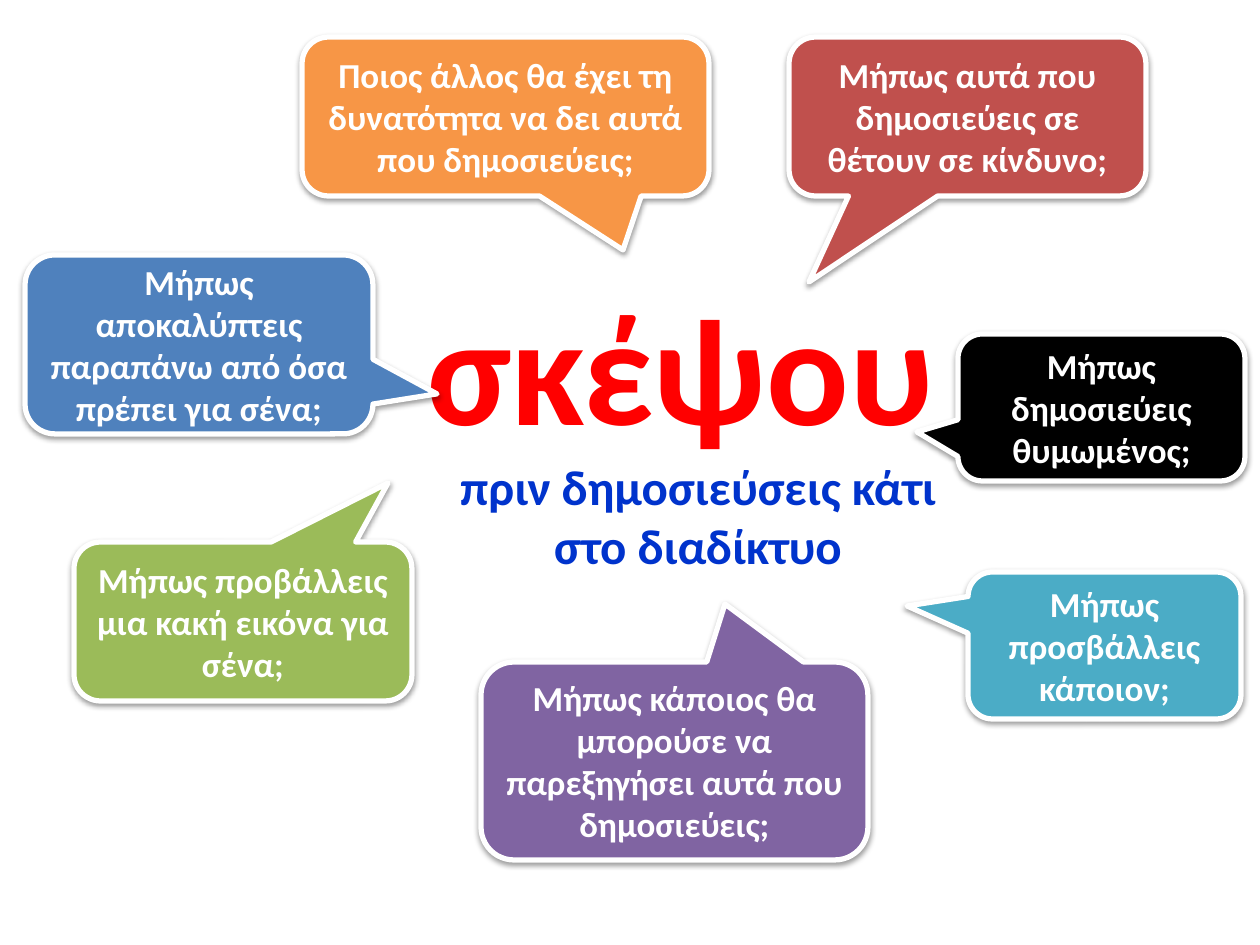
from dataclasses import dataclass

from lxml import etree
from pptx import Presentation
from pptx.dml.color import RGBColor
from pptx.enum.shapes import MSO_SHAPE
from pptx.enum.text import MSO_ANCHOR, PP_ALIGN
from pptx.oxml.ns import qn
from pptx.util import Emu, Pt

RECTANGLE = MSO_SHAPE.RECTANGLE
CALLOUT = MSO_SHAPE.ROUNDED_RECTANGULAR_CALLOUT
CENTER = PP_ALIGN.CENTER
MIDDLE = MSO_ANCHOR.MIDDLE

PIXELS_PER_INCH = 126
FONT = "Calibri"
COLORS = {
    "white": "FFFFFF",
    "black": "000000",
    "title": "FF0000",
    "subtitle": "0033CC",
    "orange": "F79646",
    "teal": "4BACC6",
    "blue": "4F81BD",
    "green": "9BBB59",
    "purple": "8064A2",
    "red": "C0504D",
}


@dataclass(frozen=True)
class Box:
    left: int
    top: int
    width: int
    height: int


@dataclass(frozen=True)
class Question:
    text: str
    color: str
    box: Box
    tip: tuple[int, int]  # point of the callout's tail


MESSAGE_BOX = Box(362, 255, 672, 336)
QUESTIONS = [
    Question("Ποιος άλλος θα έχει τη δυνατότητα να δει αυτά που δημοσιεύεις;",
             "orange", Box(302, 37, 407, 159), (623, 250)),
    Question("Μήπως δημοσιεύεις θυμωμένος;",
             "black", Box(958, 334, 287, 147), (917, 432)),
    Question("Μήπως προσβάλλεις κάποιον;",
             "teal", Box(968, 572, 273, 147), (907, 606)),
    Question("Μήπως αποκαλύπτεις παραπάνω από όσα πρέπει για σένα;",
             "blue", Box(25, 255, 348, 179), (437, 394)),
    Question("Μήπως προβάλλεις μια κακή εικόνα για σένα;",
             "green", Box(74, 542, 338, 159), (388, 483)),
    Question("Μήπως κάποιος θα μπορούσε να παρεξηγήσει αυτά που δημοσιεύεις;",
             "purple", Box(481, 662, 387, 198), (725, 604)),
    Question("Μήπως αυτά που δημοσιεύεις σε θέτουν σε κίνδυνο;",
             "red", Box(789, 37, 357, 159), (809, 282)),
]


def px(length: int) -> Emu:
    return Emu(round(length * 914400 / PIXELS_PER_INCH))


def rgb(color: str) -> RGBColor:
    return RGBColor.from_string(COLORS[color])


def add_box(slide, preset, box: Box, fill: str):
    shape = slide.shapes.add_shape(
        preset, px(box.left), px(box.top), px(box.width), px(box.height))
    shape.shadow.inherit = False
    shape.fill.solid()
    shape.fill.fore_color.rgb = rgb(fill)
    shape.text_frame.word_wrap = True
    shape.text_frame.vertical_anchor = MIDDLE
    return shape


def write_text(paragraph, text: str, *, size: int, color: str) -> None:
    paragraph.alignment = CENTER
    run = paragraph.add_run()
    run.text = text
    run.font.name = FONT
    run.font.size = Pt(size)
    run.font.bold = True
    run.font.color.rgb = rgb(color)


def add_soft_shadow(shape) -> None:
    effects = shape.element.spPr.find(qn("a:effectLst"))
    shadow = etree.SubElement(
        effects, qn("a:outerShdw"), blurRad="40000", dist="20000",
        dir="5400000", rotWithShape="0")
    color = etree.SubElement(shadow, qn("a:srgbClr"), val=COLORS["black"])
    etree.SubElement(color, qn("a:alpha"), val="38000")


def add_message(slide) -> None:
    shape = add_box(slide, RECTANGLE, MESSAGE_BOX, "white")
    shape.line.fill.background()
    frame = shape.text_frame
    write_text(frame.paragraphs[0], "σκέψου ", size=88, color="title")
    for text in ("πριν δημοσιεύσεις κάτι", "στο διαδίκτυο"):
        write_text(frame.add_paragraph(), text, size=28, color="subtitle")


def add_question(slide, question: Question) -> None:
    box = question.box
    shape = add_box(slide, CALLOUT, box, question.color)
    shape.line.color.rgb = rgb("white")
    shape.line.width = Pt(3)
    add_soft_shadow(shape)
    # The tail is set as an offset from the centre, relative to the size
    tip_x, tip_y = question.tip
    shape.adjustments[0] = (tip_x - box.left) / box.width - 0.5
    shape.adjustments[1] = (tip_y - box.top) / box.height - 0.5
    write_text(shape.text_frame.paragraphs[0], question.text,
               size=20, color="white")


def main() -> None:
    presentation = Presentation()
    presentation.slide_width = px(1260)
    presentation.slide_height = px(945)
    slide = presentation.slides.add_slide(presentation.slide_layouts[6])

    # Central message
    add_message(slide)

    # Questions around it
    for question in QUESTIONS:
        add_question(slide, question)

    presentation.save("out.pptx")


if __name__ == "__main__":
    main()
